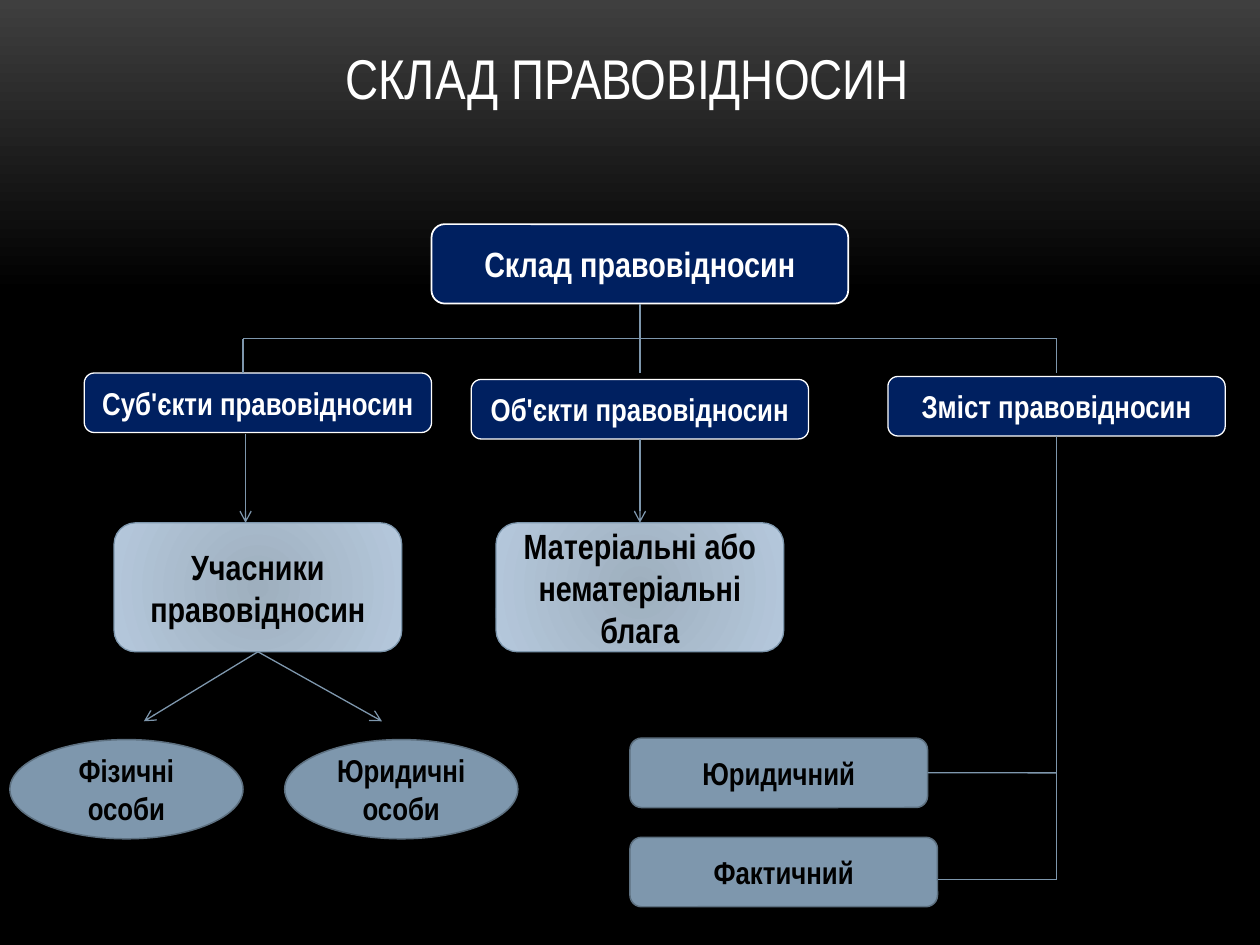
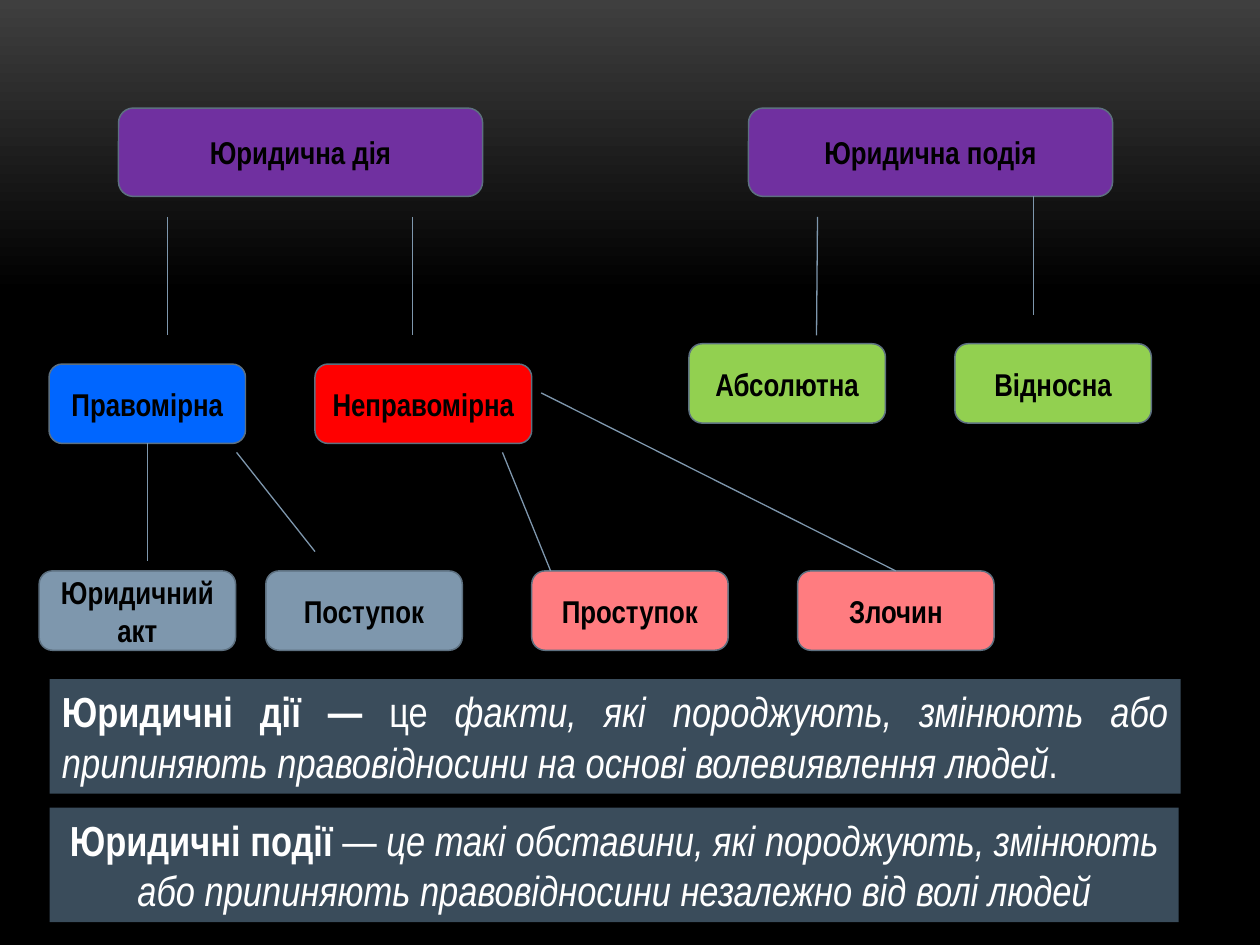
from lxml.etree import SubElement
from pptx import Presentation
from pptx.dml.color import RGBColor
from pptx.enum.shapes import MSO_CONNECTOR, MSO_SHAPE
from pptx.enum.text import MSO_ANCHOR, PP_ALIGN
from pptx.oxml.ns import qn
from pptx.util import Cm, Pt

FONT = "Arial Narrow"
HEX = {
    "white": "FFFFFF", "black": "000000", "smoke": "3F3F3F", "navy": "002060",
    "steel": "7E97AD", "edge": "5D7080", "mist": "9EAFBE", "sky": "B5C8DC",
    "violet": "7030A0", "blue": "0066FF", "red": "FF0000", "green": "92D050",
    "rose": "FF7C80", "slate": "3A4C5B",
}
ROUND, OVAL, RECT = MSO_SHAPE.ROUNDED_RECTANGLE, MSO_SHAPE.OVAL, MSO_SHAPE.RECTANGLE
TOP, BOTTOM, RIGHT = 0, 2, 3


def tint(name):
    return RGBColor.from_string(HEX[name])


def blend(fill, first, last, angle=None, end=1):
    fill.gradient()
    if angle is not None:
        fill.gradient_angle = angle
    for stop, name, pos in zip(fill.gradient_stops, (first, last), (0, end)):
        stop.color.rgb = tint(name)
        stop.position = pos


def write(par, text, size, color, bold=False, italic=False):
    run = par.add_run()
    run.text = text
    font = run.font
    font.name, font.size, font.bold, font.italic = FONT, Pt(size), bold, italic
    font.color.rgb = tint(color)


def block(slide, box, fill, edge="edge", width=0.85, kind=ROUND):
    shape = slide.shapes.add_shape(kind, *map(Cm, box))
    shape.shadow.inherit = False
    shape.fill.solid()
    shape.fill.fore_color.rgb = tint(fill)
    if edge:
        shape.line.color.rgb = tint(edge)
        shape.line.width = Pt(width)
    else:
        shape.line.fill.background()
    shape.text_frame.word_wrap = True
    shape.text_frame.paragraphs[0].alignment = PP_ALIGN.CENTER
    return shape


def label(slide, box, text, fill="steel", size=18, color="black", **look):
    shape = block(slide, box, fill, **look)
    write(shape.text_frame.paragraphs[0], text, size, color, bold=True)
    return shape


def head(slide, box, text, size=18, width=0.75):
    return label(slide, box, text, "navy", size, "white", edge="white", width=width)


def card(slide, x, y, text):
    shape = label(slide, (x, y, 5.8, 2.6), text, size=20, edge="steel", width=0.75)
    blend(shape.fill, "mist", "sky")
    grad = shape.fill._xPr.find(qn("a:gradFill"))
    for lin in grad.findall(qn("a:lin")):
        grad.remove(lin)
    path = SubElement(grad, qn("a:path"), path="circle")
    SubElement(path, qn("a:fillToRect"), {side: "100000" for side in "ltrb"})
    return shape


def link(slide, x1, y1, x2, y2, start=None, end=None, arrow=False, width=0.75):
    line = slide.shapes.add_connector(MSO_CONNECTOR.STRAIGHT, *map(Cm, (x1, y1, x2, y2)))
    line.line.color.rgb = tint("steel")
    line.line.width = Pt(width)
    props = line._element.spPr
    if arrow:
        SubElement(props.find(qn("a:ln")), qn("a:tailEnd"), type="arrow")
    SubElement(props, qn("a:effectLst"))
    if start:
        line.begin_connect(*start)
    if end:
        line.end_connect(*end)


def title(slide, box, text):
    hold = slide.shapes.title
    hold.left, hold.top, hold.width, hold.height = map(Cm, box)
    frame = hold.text_frame
    frame.vertical_anchor = MSO_ANCHOR.TOP
    par = frame.paragraphs[0]
    par.alignment = PP_ALIGN.CENTER
    write(par, text, 32, "white")


def tree(slide, x, y):
    mid, bar, low = x + 11.2, y + 2.31, y + 3
    root = head(slide, (x + 7, y, 8.4, 1.6), "Склад правовідносин", 20, 1)
    head(slide, (x, low, 7, 1.2), "Суб'єкти правовідносин")
    things = head(slide, (x + 7.8, low + 0.13, 6.8, 1.2), "Об'єкти правовідносин")
    sense = head(slide, (x + 16.2, low + 0.07, 6.8, 1.2), "Зміст правовідносин")
    link(slide, mid, y + 1.6, mid, low, start=(root, BOTTOM), width=1.5)
    link(slide, x + 3.2, bar, x + 19.6, bar)
    for drop in (x + 3.2, x + 19.6):
        link(slide, drop, bar, drop, low)
    return things, sense


def people(slide, x, y):
    link(slide, x + 4.75, y - 1.8, x + 4.75, y, arrow=True)
    group = card(slide, x + 2.1, y, "Учасники правовідносин")
    for i, text in enumerate(("Фізичні особи", "Юридичні особи")):
        label(slide, (x + 5.54 * i, y + 4.37, 4.7, 2), text, kind=OVAL)
        link(slide, x + 5, y + 2.6, x + 2.7 + 4.8 * i, y + 4, start=(group, BOTTOM), arrow=True)


def goods(slide, x, y, things):
    shape = card(slide, x, y, "Матеріальні або нематеріальні блага")
    link(slide, x + 2.9, y - 1.7, x + 2.9, y, (things, BOTTOM), (shape, TOP), arrow=True)


def sides(slide, x, y, sense):
    stem, foot = x + 8.6, y + 2.85
    law = label(slide, (x, y, 6, 1.4), "Юридичний")
    label(slide, (x, y + 2, 6.2, 1.4), "Фактичний")
    link(slide, stem, y - 6.1, stem, foot, start=(sense, BOTTOM))
    link(slide, stem, foot, x + 6.2, foot)
    link(slide, stem, y + 0.7, x + 6, y + 0.7, end=(law, RIGHT))


def deeds(slide, x, y):
    label(slide, (x + 1.6, y, 7.34, 1.78), "Юридична дія", "violet")
    for drop in (x + 2.58, x + 7.53):
        link(slide, drop, y + 2.19, drop, y + 4.58)
    right = label(slide, (x + 0.2, y + 5.16, 3.96, 1.6), "Правомірна", "blue")
    label(slide, (x + 5.56, y + 5.16, 4.37, 1.6), "Неправомірна", "red")
    leaves = (
        (0, "Юридичний акт", "steel"), (4.57, "Поступок", "steel"),
        (9.93, "Проступок", "rose"), (15.29, "Злочин", "rose"),
    )
    for dx, text, fill in leaves:
        leaf = label(slide, (x + dx, y + 9.33, 3.96, 1.6), text, fill)
    link(slide, x + 2.18, y + 6.76, x + 2.18, y + 9.12, start=(right, BOTTOM))
    link(slide, x + 3.98, y + 6.94, x + 5.56, y + 8.94)
    link(slide, x + 9.34, y + 6.94, x + 10.31, y + 9.33)
    link(slide, x + 10.12, y + 5.74, x + 17.27, y + 9.33, end=(leaf, TOP))


def events(slide, x, y):
    label(slide, (x + 1.2, y, 7.34, 1.78), "Юридична подія", "violet")
    for i, text in enumerate(("Абсолютна", "Відносна")):
        label(slide, (x + 5.36 * i, y + 4.75, 3.96, 1.6), text, "green")
    link(slide, x + 2.59, y + 2.19, x + 2.57, y + 4.58)
    link(slide, x + 6.94, y + 1.78, x + 6.94, y + 4.17)


def note(slide, box, align, runs):
    shape = block(slide, box, "slate", edge=None, kind=RECT)
    par = shape.text_frame.paragraphs[0]
    par.alignment = align
    for text, bold, italic in runs:
        write(par, text, 24, "white", bold, italic)


def parts(deck):
    slide = deck.slides.add_slide(deck.slide_layouts[5])
    title(slide, (1.85, 0.74, 21.6, 1.63), "СКЛАД ПРАВОВІДНОСИН")
    things, sense = tree(slide, 1.7, 4.52)
    people(slide, 0.2, 10.54)
    goods(slide, 10, 10.54, things)
    sides(slide, 12.7, 14.88, sense)


def facts(deck):
    slide = deck.slides.add_slide(deck.slide_layouts[6])
    deeds(slide, 0.79, 2.18)
    events(slide, 13.89, 2.18)
    note(slide, (1, 13.69, 22.8, 2.31), PP_ALIGN.JUSTIFY, (
        ("Юридичні дії —", True, False),
        (" це ", False, False),
        ("факти, які породжують, змінюють або припиняють правовідносини "
         "на основі волевиявлення людей", False, True),
        (".", False, False),
    ))
    note(slide, (1, 16.28, 22.76, 2.31), PP_ALIGN.CENTER, (
        ("Юридичні події ", True, False),
        ("— ", False, False),
        ("це такі обставини, які породжують, змінюють або припиняють "
         "правовідносини незалежно від волі людей", False, True),
    ))


def main():
    deck = Presentation()
    deck.slide_width, deck.slide_height = Cm(25.4), Cm(19.05)
    blend(deck.slide_master.background.fill, "smoke", "black", 270, 0.31)
    parts(deck)
    facts(deck)
    deck.save("out.pptx")


if __name__ == "__main__":
    main()
